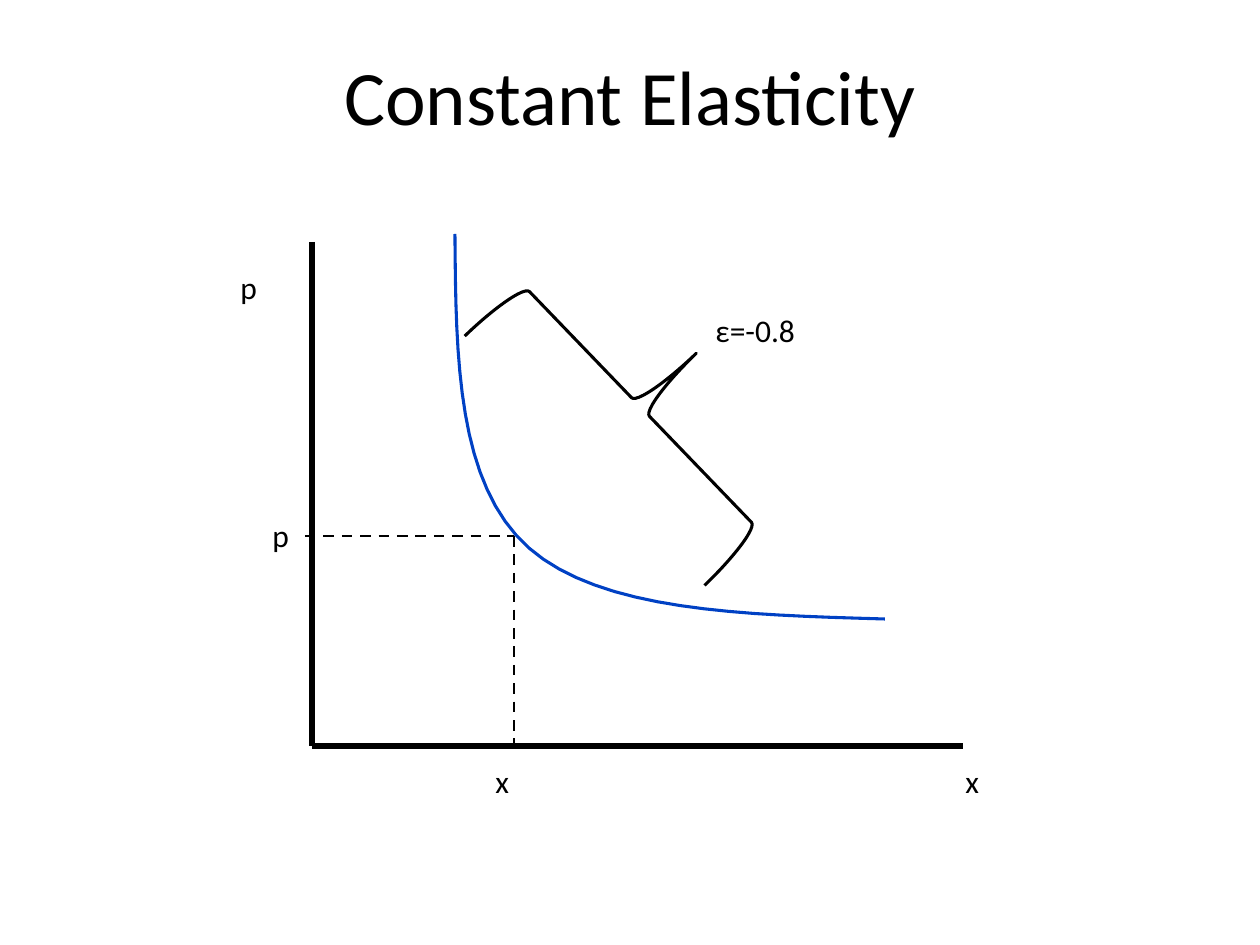
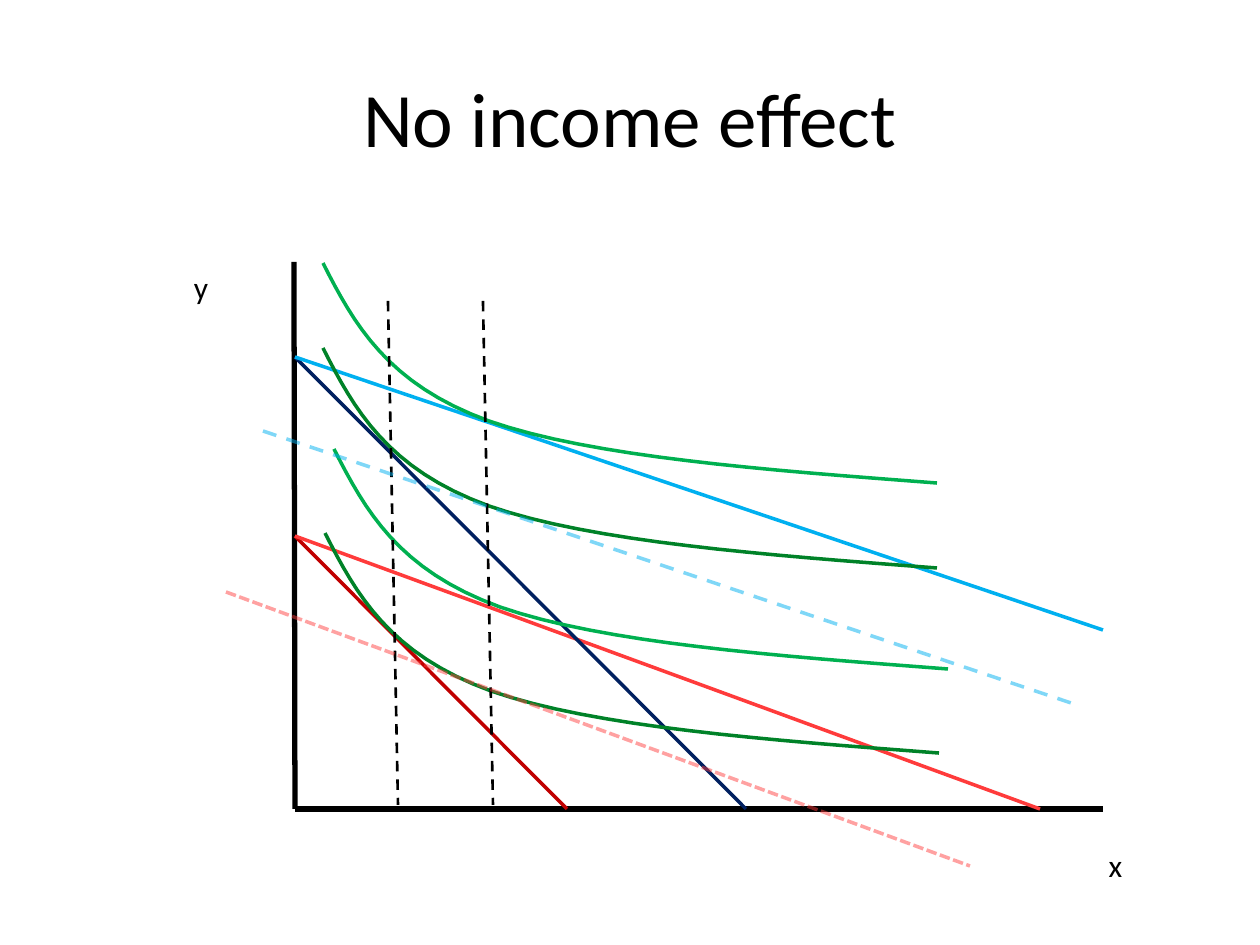
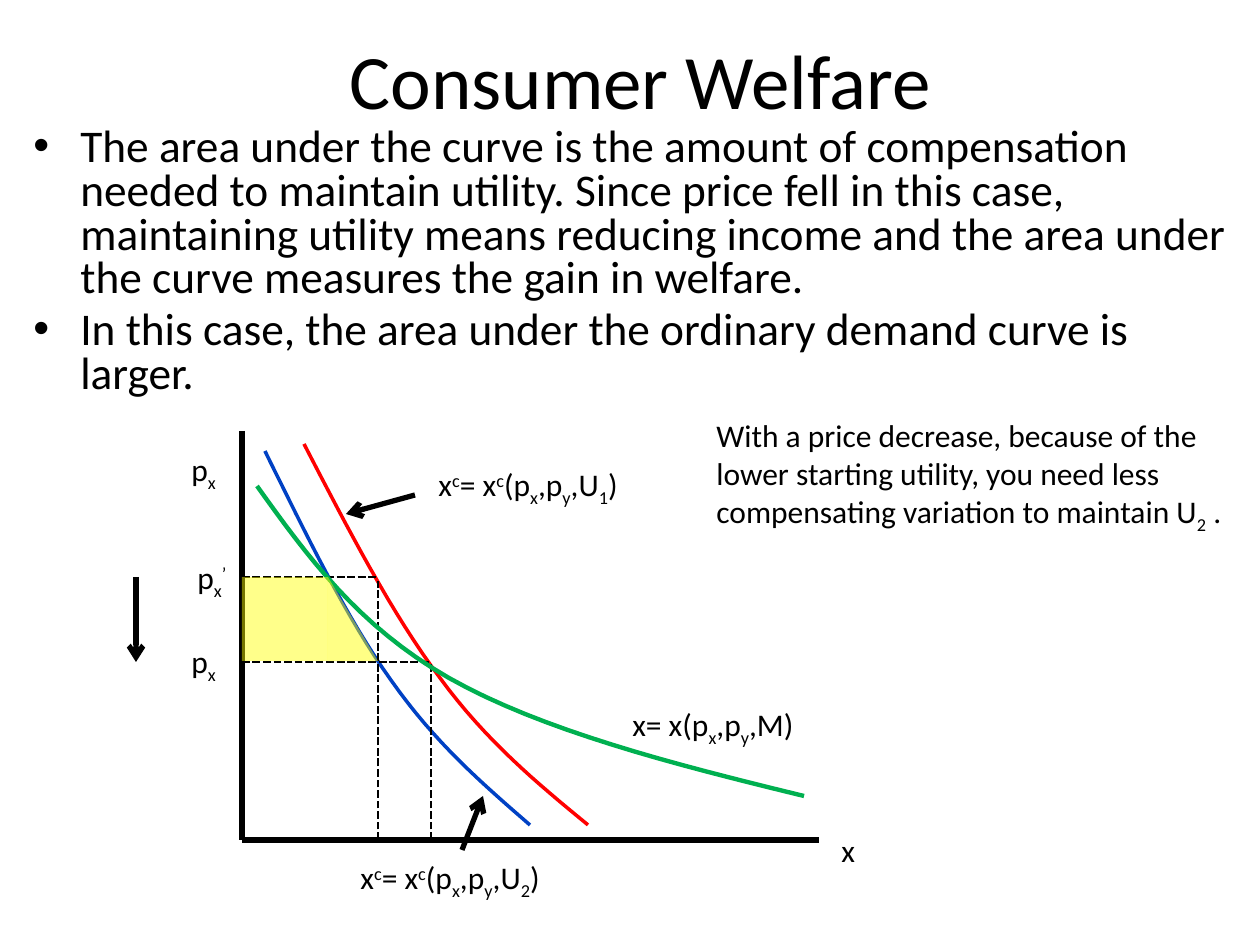
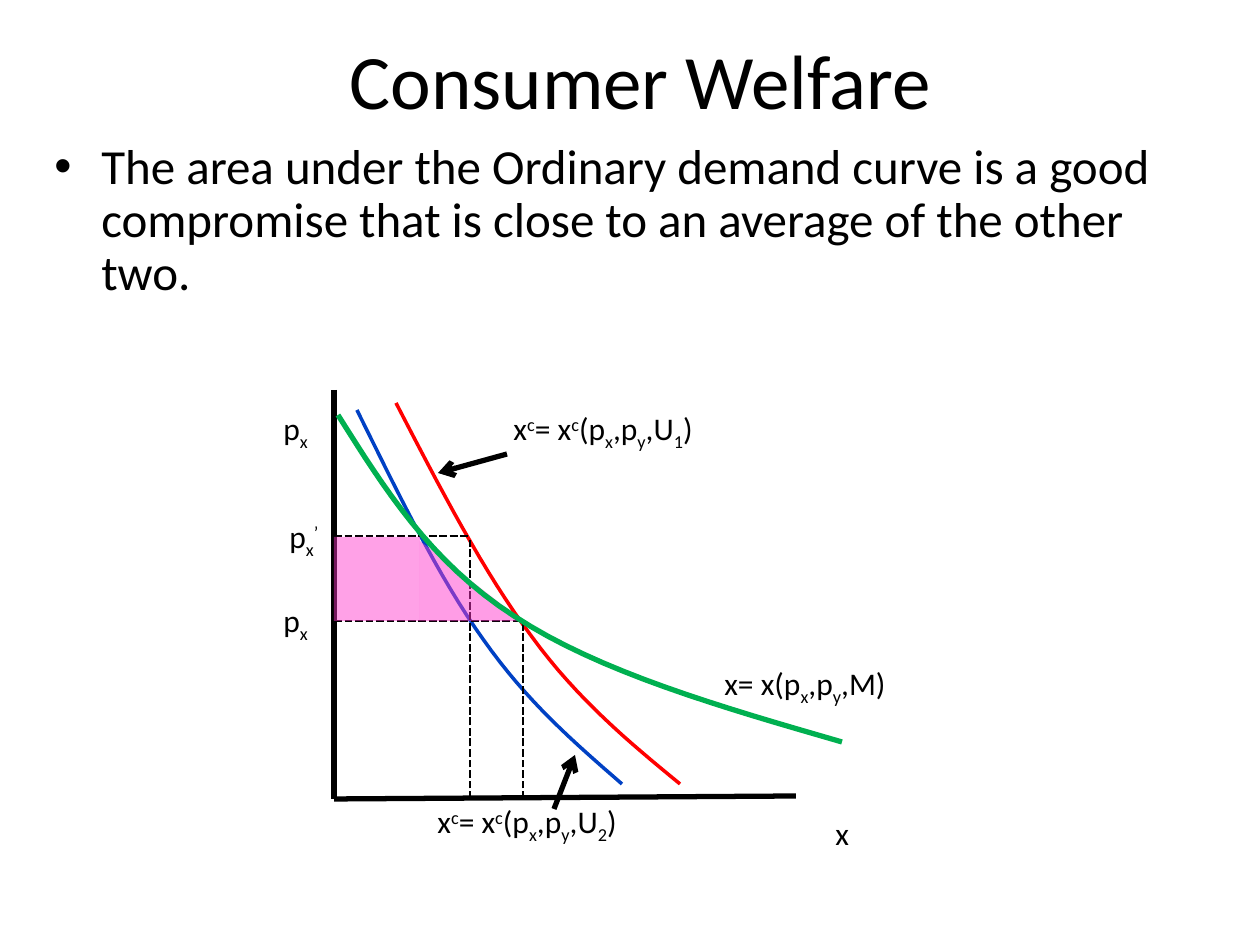
from pptx import Presentation
from pptx.dml.color import RGBColor
from pptx.enum.dml import MSO_LINE
from pptx.enum.shapes import MSO_CONNECTOR, MSO_SHAPE
from pptx.enum.text import MSO_ANCHOR, MSO_AUTO_SIZE, PP_ALIGN
from pptx.oxml.ns import qn
from pptx.util import Emu, Pt
from lxml import etree

STRAIGHT = MSO_CONNECTOR.STRAIGHT
BRACE, TRIANGLE, RECT = MSO_SHAPE.RIGHT_BRACE, MSO_SHAPE.RIGHT_TRIANGLE, MSO_SHAPE.RECTANGLE
DASH, SHORT_DASH = MSO_LINE.DASH, MSO_LINE.SQUARE_DOT
MIDDLE, CENTER, LEFT = MSO_ANCHOR.MIDDLE, PP_ALIGN.CENTER, PP_ALIGN.LEFT
FIT, NO_FIT = MSO_AUTO_SIZE.SHAPE_TO_FIT_TEXT, MSO_AUTO_SIZE.NONE

# Shared look
EMU_PER_PX = 914400 / 126
FONT = "Calibri"
BLACK, BLUE, RED, GREEN = "000000", "0041C4", "FF0000", "00B050"
DARK_GREEN, DARK_RED, CORAL = "008228", "C00000", "FF3B3B"
NAVY, SKY, YELLOW, PINK = "002060", "00B0F0", "FFFF00", "FF33CC"
BASELINES = {"_": "-25000", "^": "30000"}
CURVE_STEPS = 16


def px(n):
    return Emu(round(n * EMU_PER_PX))


def rgb(color):
    return RGBColor.from_string(color)


def set_alpha(shape, percent):
    for color in shape._element.spPr.iter(qn("a:srgbClr")):
        etree.SubElement(color, qn("a:alpha")).set("val", str(percent * 1000))


def set_line(shape, color, width):
    shape.line.color.rgb = rgb(color)
    shape.line.width = Pt(width)


# Text
def write(p, text, size):
    """Fill a paragraph; _ lowers and ^ raises the next character."""
    chunks, mark = [["", None]], None
    for char in text:
        if char in BASELINES:
            mark = char
        elif mark or chunks[-1][1]:
            chunks.append([char, mark])
            mark = None
        else:
            chunks[-1][0] += char
    for chunk, mark in chunks:
        r = p.add_run()
        r.text = chunk
        r.font.name, r.font.size = FONT, Pt(size)
        r.font.color.rgb = rgb(BLACK)
        if mark:
            r._r.get_or_add_rPr().set("baseline", BASELINES[mark])


def add_text(s, x, y, w, h, text, size=18, wrap=False, align=LEFT):
    box = s.shapes.add_textbox(px(x), px(y), px(w), px(h))
    tf = box.text_frame
    tf.word_wrap = wrap
    tf.auto_size = FIT
    p = tf.paragraphs[0]
    p.alignment = align
    write(p, text, size)
    return tf


def add_title(s, x, y, w, h, text):
    tf = add_text(s, x, y, w, h, text, size=44, wrap=True, align=CENTER)
    tf.auto_size = NO_FIT
    tf.vertical_anchor = MIDDLE


def add_bullets(s, x, y, w, h, items, size, spacing):
    tf = s.shapes.add_textbox(px(x), px(y), px(w), px(h)).text_frame
    tf.word_wrap = True
    for i, item in enumerate(items):
        p = tf.add_paragraph() if i else tf.paragraphs[0]
        pPr = p._p.get_or_add_pPr()
        pPr.set("marL", str(px(47)))
        pPr.set("indent", str(-px(47)))
        etree.SubElement(pPr, qn("a:buFont")).set("typeface", "Arial")
        etree.SubElement(pPr, qn("a:buChar")).set("char", "•")
        p.line_spacing = spacing
        p.space_before = Pt(round(size * 0.2) if i else 0)
        write(p, item, size)


# Lines and shapes
def add_line(s, start, end, color=BLACK, width=3, dash=None, arrow=False, alpha=None):
    c = s.shapes.add_connector(STRAIGHT, *map(px, start + end))
    set_line(c, color, width)
    if dash:
        c.line.dash_style = dash
    spPr = c._element.spPr
    if arrow:
        etree.SubElement(spPr.find(qn("a:ln")), qn("a:tailEnd")).set("type", "arrow")
    if alpha:
        set_alpha(c, alpha)
    etree.SubElement(spPr, qn("a:effectLst"))


def add_axes(s, top, origin, right):
    add_line(s, top, origin)
    add_line(s, origin, right)


def add_curve(s, points, color, width=2, dx=0, dy=0):
    """Draw joined cubic curves: a start, then two controls and an end for each."""
    def at(a, b, c, d, t):
        u = 1 - t
        return u**3 * a + 3 * u * u * t * b + 3 * u * t * t * c + t**3 * d

    points = [(x + dx, y + dy) for x, y in points]
    dots = []
    for i in range(0, len(points) - 1, 3):
        xs, ys = zip(*points[i:i + 4])
        for step in range(1, CURVE_STEPS + 1):
            t = step / CURVE_STEPS
            dots.append((px(at(*xs, t)), px(at(*ys, t))))
    fb = s.shapes.build_freeform(*map(px, points[0]))
    fb.add_line_segments(dots, close=False)
    sp = fb.convert_to_shape()
    sp.shadow.inherit = False
    sp.fill.background()
    set_line(sp, color, width)


def add_brace(s, x, y, w, h, rotation):
    sp = s.shapes.add_shape(BRACE, px(x), px(y), px(w), px(h))
    sp.shadow.inherit = False
    sp.rotation = rotation
    sp.fill.background()
    set_line(sp, BLACK, 1.75)


def add_area(s, kind, x, y, w, h, color, alpha):
    sp = s.shapes.add_shape(kind, px(x), px(y), px(w), px(h))
    sp.shadow.inherit = False
    sp.fill.solid()
    sp.fill.fore_color.rgb = rgb(color)
    sp.line.fill.background()
    set_alpha(sp, alpha)


def add_demand_diagram(s, axis_end, x_label, u1_label, u2_label, dx=0, dy=0):
    """Two compensated demand curves with both prices; dx, dy move the diagram."""
    def move(x, y):
        return x + dx, y + dy

    add_axes(s, move(242, 431), move(242, 840), axis_end)
    add_curve(s, [(304, 444), (348, 529), (392, 614), (440, 678),
                  (486, 741), (538, 784), (588, 825)], RED, dx=dx, dy=dy)
    add_curve(s, [(265, 451), (306, 534), (347, 619), (391, 680),
                  (435, 743), (483, 784), (530, 825)], BLUE, dx=dx, dy=dy)
    for x, y, gap in [(431, 662, 0), (378, 577, 4)]:
        add_line(s, move(242, y), move(x, y), width=1.5, dash=SHORT_DASH)
        add_line(s, move(x, 840), move(x, y + gap), width=1.5, dash=SHORT_DASH)
    for start, end in [((462, 850), (483, 796)), ((415, 495), (346, 514))]:
        add_line(s, move(*start), move(*end), arrow=True)
    for x, y, w, text in [(179, 444, 50, "p_x"), (179, 636, 50, "p_x"),
                          (185, 552, 57, "p_x^’"), (620, 699, 189, "x= x(p_x,p_y,M)")]:
        add_text(s, *move(x, y), w, 50, text)
    add_text(s, *x_label, 39, 50, "x")
    add_text(s, *u1_label, 209, 50, "x^c= x^c(p_x,p_y,U_1)")
    add_text(s, *u2_label, 209, 50, "x^c= x^c(p_x,p_y,U_2)")


# Slides
def constant_elasticity(s):
    add_title(s, 63, 32, 1134, 126, "Constant Elasticity")
    add_axes(s, (312, 242), (312, 746), (963, 746))
    add_line(s, (305, 536), (514, 536), width=1.5, dash=DASH)
    add_line(s, (514, 536), (514, 746), width=1.5, dash=DASH)
    add_text(s, 228, 262, 43, 50, "p")
    add_text(s, 953, 756, 39, 50, "x")
    add_text(s, 260, 510, 43, 50, "p")
    add_text(s, 483, 756, 53, 50, "x", wrap=True)
    add_text(s, 703, 305, 105, 50, "ε=-0.8")
    add_curve(s, [(455, 234), (456, 359), (457, 484), (529, 548),
                  (601, 611), (742, 615), (885, 619)], BLUE, 1.75)
    add_brace(s, 563, 234, 155, 346, 316.1)


def no_income_effect(s):
    add_title(s, 63, 38, 1134, 158, "No income effect")
    add_axes(s, (294, 262), (295, 809), (1103, 809))
    for y, end, color in [(536, (567, 809), DARK_RED), (536, (1040, 809), CORAL),
                          (357, (746, 809), NAVY), (357, (1103, 630), SKY)]:
        add_line(s, (295, y), end, color, 2)
    indifference = [(0, 0), (31, 61), (64, 121), (166, 158),
                    (269, 194), (442, 207), (614, 220)]
    for dx, dy, color in [(323, 263, GREEN), (334, 449, GREEN),
                          (323, 348, DARK_GREEN), (325, 533, DARK_GREEN)]:
        add_curve(s, indifference, color, dx=dx, dy=dy)
    for x in (388, 483):
        add_line(s, (x, 301), (x + 10, 805), width=1.5, dash=DASH)
    add_text(s, 181, 262, 40, 50, "y", align=CENTER)
    add_text(s, 1096, 840, 39, 50, "x", align=CENTER)
    add_line(s, (226, 592), (970, 866), CORAL, 2, SHORT_DASH, alpha=48)
    add_line(s, (263, 431), (1071, 703), SKY, 2, DASH, alpha=49)


def welfare_gain(s):
    add_title(s, 105, 21, 1071, 116, "Consumer Welfare")
    add_bullets(s, 21, 122, 1218, 287, [
        "The area under the curve is the amount of compensation needed to maintain "
        "utility. Since price fell in this case, maintaining utility means reducing "
        "income and the area under the curve measures the gain in welfare.",
        "In this case, the area under the ordinary demand curve is larger.",
    ], 25.9, 0.8)
    add_demand_diagram(s, (819, 840), (829, 825), (426, 459), (348, 852))
    add_line(s, (136, 577), (136, 662), arrow=True)
    add_curve(s, [(257, 486), (307, 556), (358, 626), (449, 678),
                  (541, 730), (672, 764), (804, 796)], GREEN, 2.5)
    add_text(s, 704, 410, 534, 127,
             "With a price decrease, because of the lower starting utility, you need "
             "less compensating variation to maintain U_2 .", wrap=True)
    add_area(s, TRIANGLE, 328, 577, 50, 84, YELLOW, 48)
    add_area(s, RECT, 242, 577, 86, 84, YELLOW, 46)


def welfare_compromise(s):
    add_title(s, 105, 21, 1071, 116, "Consumer Welfare")
    add_bullets(s, 42, 136, 1124, 260, [
        "The area under the Ordinary demand curve is a good compromise that is close "
        "to an average of the other two.",
    ], 28, 0.9)
    add_demand_diagram(s, (796, 796), (823, 808), (501, 403), (425, 796), dx=92, dy=-41)
    add_area(s, TRIANGLE, 420, 541, 103, 80, PINK, 48)
    add_area(s, RECT, 334, 537, 86, 84, PINK, 46)
    add_curve(s, [(338, 415), (384, 488), (430, 562), (514, 616),
                  (599, 672), (721, 707), (842, 742)], GREEN, 3)


def main():
    prs = Presentation()
    prs.slide_width, prs.slide_height = px(1260), px(945)
    for build in (constant_elasticity, no_income_effect, welfare_gain, welfare_compromise):
        build(prs.slides.add_slide(prs.slide_layouts[6]))
    prs.save("out.pptx")


if __name__ == "__main__":
    main()
